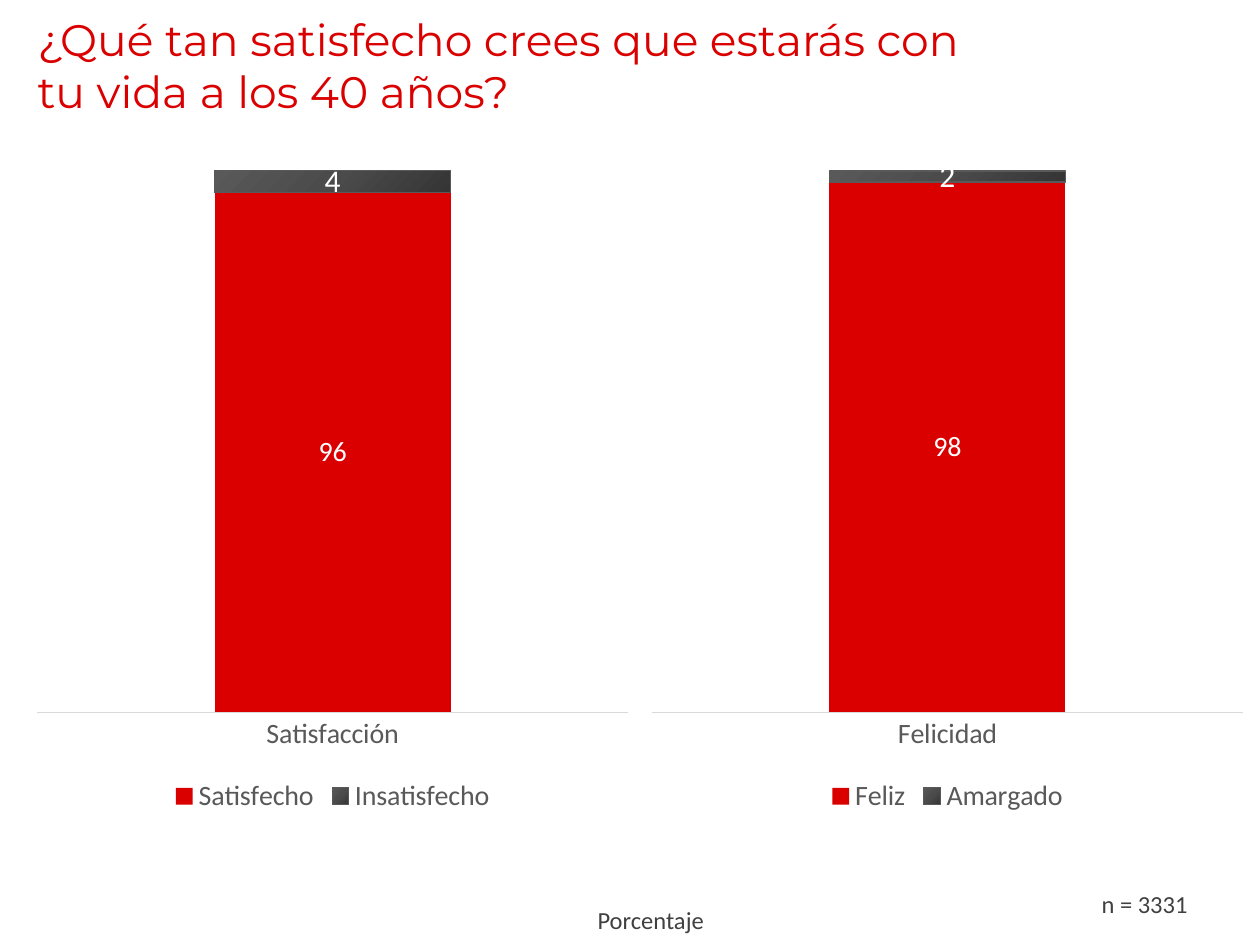
from copy import deepcopy

from pptx import Presentation
from pptx.chart.data import CategoryChartData
from pptx.dml.color import RGBColor
from pptx.enum.chart import XL_CHART_TYPE, XL_LEGEND_POSITION, XL_TICK_MARK
from pptx.enum.text import MSO_ANCHOR, PP_ALIGN
from pptx.oxml.ns import qn
from pptx.util import Pt

STACKED = XL_CHART_TYPE.COLUMN_STACKED
LEGEND_BOTTOM = XL_LEGEND_POSITION.BOTTOM
NO_TICK = XL_TICK_MARK.NONE
MIDDLE = MSO_ANCHOR.MIDDLE
LEFT, CENTER = PP_ALIGN.LEFT, PP_ALIGN.CENTER

RED, WHITE = "DB0000", "FFFFFF"
TEXT_GRAY, AXIS_GRAY, LINE_GRAY = "404040", "595959", "D9D9D9"
DARK_STOPS = [(0, "353535"), (0.5, "4B4B4B"), (1, "595959")]

CHART_LEFT, CHART_TOP = 14.4, 90
CHART_WIDTH, CHART_HEIGHT = 351.36, 378
QUESTIONS = [
    ("Satisfacción", [("Satisfecho", 96), ("Insatisfecho", 4)]),
    ("Felicidad", [("Feliz", 98), ("Amargado", 2)]),
]


def rgb(color):
    return RGBColor.from_string(color)


def style_font(font, size, color, name="Calibri"):
    font.size = Pt(size)
    font.name = name
    font.color.rgb = rgb(color)


def add_text(slide, text, box, size, color, name="Calibri", align=CENTER):
    frame = slide.shapes.add_textbox(*map(Pt, box)).text_frame
    frame.word_wrap = True
    frame.vertical_anchor = MIDDLE
    frame.text = text
    paragraph = frame.paragraphs[0]
    paragraph.alignment = align
    style_font(paragraph.runs[0].font, size, color, name)


def fill_dark_gradient(series):
    fill = series.format.fill
    fill.gradient()
    fill.gradient_angle = 135
    stop_list = next(series._element.iter(qn("a:gsLst")))
    stop_list.append(deepcopy(stop_list[-1]))
    for stop, (position, color) in zip(fill.gradient_stops, DARK_STOPS):
        stop.position = position
        stop.color.rgb = rgb(color)


def label_values(series, size):
    labels = series.data_labels
    labels.show_value = True
    style_font(labels.font, size, WHITE)


def style_axes(chart):
    category_axis, value_axis = chart.category_axis, chart.value_axis
    category_axis.major_tick_mark = NO_TICK
    category_axis.minor_tick_mark = NO_TICK
    category_axis.format.line.color.rgb = rgb(LINE_GRAY)
    category_axis.format.line.width = Pt(0.75)
    style_font(category_axis.tick_labels.font, 16, AXIS_GRAY)
    value_axis.visible = False
    value_axis.has_major_gridlines = False
    value_axis.minimum_scale = 0
    value_axis.maximum_scale = 100


def add_stacked_chart(slide, category, answers, left):
    data = CategoryChartData(number_format="0")
    data.categories = [category]
    for answer, percent in answers:
        data.add_series(answer, [percent])
    box = (left, CHART_TOP, CHART_WIDTH, CHART_HEIGHT)
    chart = slide.shapes.add_chart(STACKED, *map(Pt, box), data).chart
    style_font(chart.font, 10, "000000")
    chart.has_title = False
    chart.has_legend = True
    chart.legend.position = LEGEND_BOTTOM
    chart.legend.include_in_layout = False
    style_font(chart.legend.font, 16, AXIS_GRAY)
    style_axes(chart)

    plot = chart.plots[0]
    plot.vary_by_categories = False
    plot.gap_width = 150
    plot.overlap = 100
    positive, negative = plot.series
    positive.format.fill.solid()
    positive.format.fill.fore_color.rgb = rgb(RED)
    label_values(positive, 16)
    fill_dark_gradient(negative)
    negative.format.line.color.rgb = rgb(AXIS_GRAY)
    negative.format.line.width = Pt(0.75)
    label_values(negative, 18)


def main():
    presentation = Presentation()
    presentation.slide_width, presentation.slide_height = Pt(720), Pt(540)
    slide = presentation.slides.add_slide(presentation.slide_layouts[6])
    add_text(slide, "Porcentaje", (257.76, 511.2, 228.24, 28.8), 14, TEXT_GRAY)
    add_text(slide, "n = 3331", (602.64, 501.84, 102.96, 28.8), 14, TEXT_GRAY)
    add_text(slide, "¿Qué tan satisfecho crees que estarás con tu vida a los 40 años?",
             (14.4, 7.2, 545, 59.76), 25.2, RED, "Montserrat", LEFT)
    for column, (category, answers) in enumerate(QUESTIONS):
        add_stacked_chart(slide, category, answers, CHART_LEFT + column * CHART_WIDTH)
    presentation.save("out.pptx")


if __name__ == "__main__":
    main()
